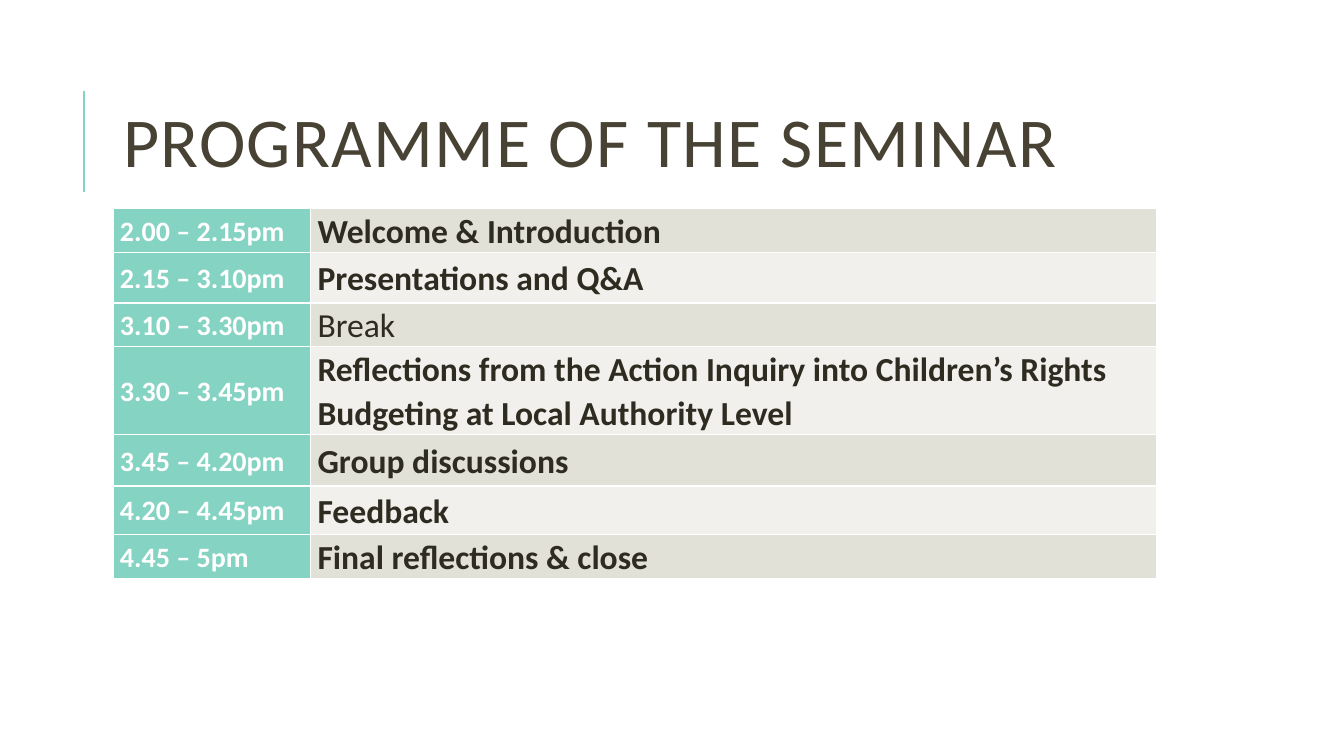
"""Build the seminar programme slide."""
from dataclasses import dataclass

from lxml import etree
from pptx import Presentation
from pptx.dml.color import RGBColor
from pptx.enum.shapes import MSO_CONNECTOR
from pptx.enum.text import MSO_ANCHOR, MSO_AUTO_SIZE, PP_ALIGN
from pptx.oxml.ns import qn
from pptx.slide import Slide
from pptx.table import _Cell
from pptx.text.text import _Paragraph
from pptx.util import Inches, Pt

LEFT = PP_ALIGN.LEFT
MIDDLE = MSO_ANCHOR.MIDDLE
STRAIGHT = MSO_CONNECTOR.STRAIGHT
NO_FIT = MSO_AUTO_SIZE.NONE

FONT = "Calibri"
TEAL, WHITE, BROWN, DARK = "85D3C3", "FFFFFF", "474233", "2E2B21"
BANDS = ("E2E1D7", "F1F0EC")
COLUMNS = (1.96, 8.39)


@dataclass
class Session:
    """One row of the programme."""
    time: str
    topic: str
    height: float
    bold: bool = True


SESSIONS = [
    Session("2.00 – 2.15pm", "Welcome & Introduction", 0.4),
    Session("2.15 – 3.10pm", "Presentations and Q&A", 0.5),
    Session("3.10 – 3.30pm", "Break\u00a0", 0.4, bold=False),
    Session("3.30 – 3.45pm", "Reflections from the Action Inquiry into Children’s Rights "
            "Budgeting at Local Authority Level", 0.8),
    Session("3.45 – 4.20pm", "Group discussions", 0.51),
    Session("4.20 – 4.45pm", "Feedback", 0.48),
    Session("4.45 – 5pm", "Final reflections & close", 0.4),
]


def rgb(color: str) -> RGBColor:
    """Turn a hex string into a colour."""
    return RGBColor.from_string(color)


def write(p: _Paragraph, text: str, *, size: float, color: str,
          bold: bool = False, line: float = 1.0, gap: float = 0, spacing: int = 0) -> None:
    """Write one formatted run into a paragraph."""
    p.alignment = LEFT
    p.line_spacing = line
    p.space_before = p.space_after = Pt(gap)
    r = p.add_run()
    r.text = text
    r.font.name, r.font.size, r.font.bold = FONT, Pt(size), bold
    r.font.color.rgb = rgb(color)
    if spacing:
        r.font._element.set("spc", str(spacing))


def add_borders(cell: _Cell, color: str, width: float) -> None:
    """Draw all four borders of a cell."""
    tc_pr = cell._tc.get_or_add_tcPr()
    for i, side in enumerate(("lnL", "lnR", "lnT", "lnB")):
        ln = etree.Element(qn(f"a:{side}"), w=str(Pt(width)))
        fill = etree.SubElement(ln, qn("a:solidFill"))
        etree.SubElement(fill, qn("a:srgbClr"), val=color)
        tc_pr.insert(i, ln)


def fill_cell(cell: _Cell, text: str, *, fill: str, size: float, color: str,
              bold: bool) -> None:
    """Fill and format one table cell."""
    cell.fill.solid()
    cell.fill.fore_color.rgb = rgb(fill)
    cell.vertical_anchor = MIDDLE
    cell.margin_left = cell.margin_right = Inches(0.07)
    cell.margin_top = cell.margin_bottom = 0
    add_borders(cell, WHITE, 1)
    write(cell.text_frame.paragraphs[0], text, size=size, color=color, bold=bold,
          line=1.07, gap=4.8)


def add_title(s: Slide, text: str) -> None:
    """Place the title and the accent line beside it."""
    line = s.shapes.add_connector(STRAIGHT, Inches(0.83), Inches(1.9), Inches(0.83), Inches(0.9))
    line.line.color.rgb = rgb(TEAL)
    line.line.width = Pt(1.5)
    etree.SubElement(line._element.spPr, qn("a:effectLst"))

    sp = s.shapes.title
    sp.left, sp.top, sp.width, sp.height = Inches(1.12), Inches(0.64), Inches(10.63), Inches(1.64)
    tf = sp.text_frame
    tf.word_wrap, tf.auto_size, tf.vertical_anchor = True, NO_FIT, MIDDLE
    write(tf.paragraphs[0], text, size=50, color=BROWN, line=0.8, spacing=100)


def add_programme(s: Slide, sessions: list[Session]) -> None:
    """Add the timetable with alternating row colours."""
    height = sum(session.height for session in sessions)
    table = s.shapes.add_table(len(sessions), len(COLUMNS), Inches(1.12), Inches(2.07),
                               Inches(sum(COLUMNS)), Inches(height)).table
    for column, width in zip(table.columns, COLUMNS):
        column.width = Inches(width)
    for i, session in enumerate(sessions):
        table.rows[i].height = Inches(session.height)
        fill_cell(table.cell(i, 0), session.time, fill=TEAL, size=20, color=WHITE, bold=True)
        fill_cell(table.cell(i, 1), session.topic, fill=BANDS[i % 2], size=24, color=DARK,
                  bold=session.bold)


def main() -> None:
    """Build and save the presentation."""
    prs = Presentation()
    prs.slide_width, prs.slide_height = Inches(13.33), Inches(7.5)
    s = prs.slides.add_slide(prs.slide_layouts[5])
    s.background.fill.solid()
    s.background.fill.fore_color.rgb = rgb(WHITE)
    add_title(s, "PROGRAMME OF THE SEMINAR")
    add_programme(s, SESSIONS)
    prs.save("out.pptx")


if __name__ == "__main__":
    main()
